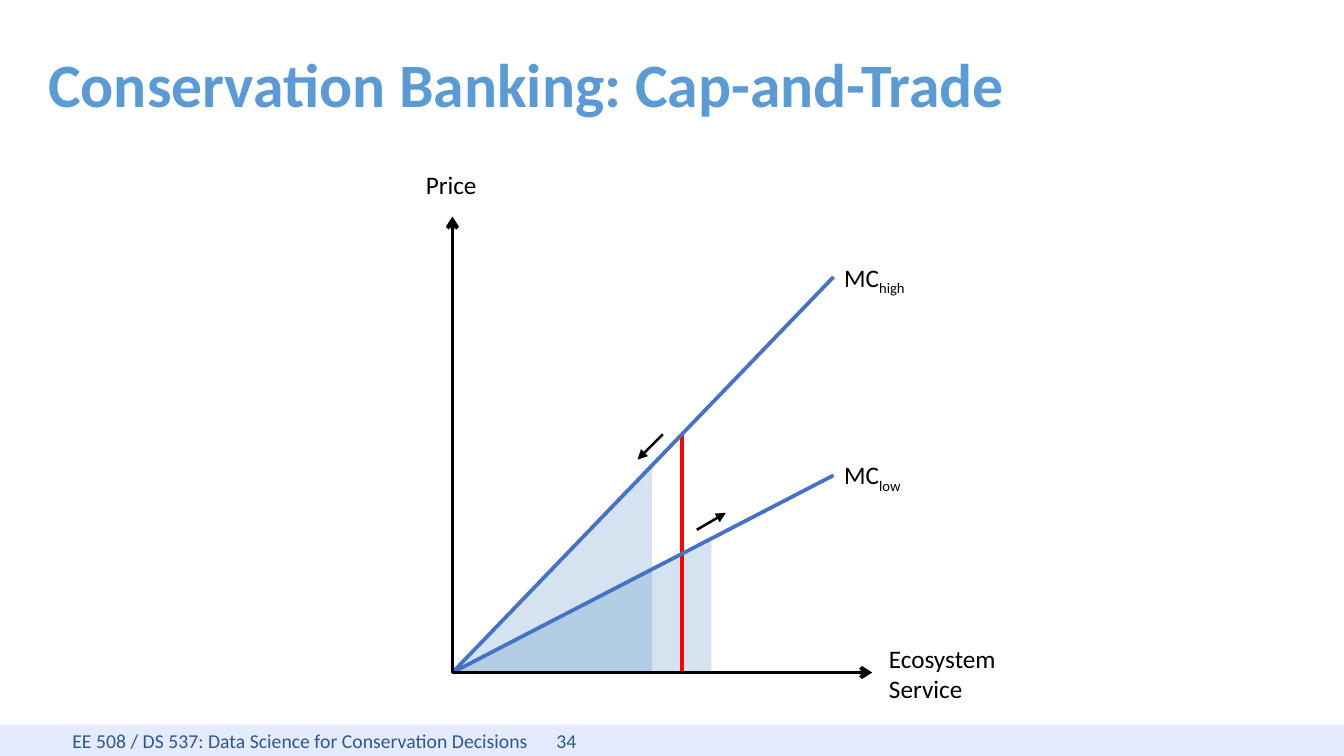
import pptx
import pptx.util
import pptx.dml.color
import pptx.enum.shapes
import pptx.enum.text
import pptx.oxml
import pptx.oxml.ns

Inches = pptx.util.Inches
Color = pptx.dml.color.RGBColor
Shape = pptx.enum.shapes.MSO_SHAPE
Align = pptx.enum.text.PP_ALIGN
Middle = pptx.enum.text.MSO_ANCHOR.MIDDLE

BLACK = Color(0x00, 0x00, 0x00)
RED = Color(0xFF, 0x00, 0x00)
BLUE = Color(0x44, 0x72, 0xC4)
SKY = Color(0x5B, 0x9B, 0xD5)
SHADE = Color(0x2E, 0x75, 0xB6)
NAVY = Color(0x2F, 0x55, 0x97)
PALE = Color(0xE3, 0xEB, 0xFC)

TITLE = {"name": "Calibri", "size": pptx.util.Pt(36.7), "bold": True}
LABEL = {"name": "Calibri", "size": pptx.util.Pt(15)}
FOOT = {"name": "Calibri", "size": pptx.util.Pt(11.7)}


def add_xml(parent, tag, **attrs):
    node = pptx.oxml.parse_xml(f"<a:{tag} {pptx.oxml.ns.nsdecls('a')}/>")
    for key, value in attrs.items():
        node.set(key, str(value))
    parent.append(node)
    return node


def add_run(para, words, style, color):
    run = para.add_run()
    run.text = words
    for key, value in style.items():
        setattr(run.font, key, value)
    run.font.color.rgb = color
    return run


deck = pptx.Presentation()
deck.slide_width, deck.slide_height = Inches(11.11), Inches(6.25)
slide = deck.slides.add_slide(deck.slide_layouts[6])
shapes = slide.shapes

band = shapes.add_shape(
    Shape.RECTANGLE, Inches(0), Inches(5.99), Inches(11.11), Inches(0.26)
)
band.shadow.inherit = False
band.fill.solid()
band.fill.fore_color.rgb = PALE
band.line.fill.background()
band.text_frame.vertical_anchor = Middle
para = band.text_frame.paragraphs[0]
para.alignment = Align.LEFT
tabs = add_xml(para._p.get_or_add_pPr(), "tabLst")
for stop in (0.5, 4.5):
    add_xml(tabs, "tab", pos=Inches(stop), algn="l")
add_run(
    para, "\tEE 508 / DS 537: Data Science for Conservation Decisions\t34", FOOT, NAVY
)

title = shapes.add_textbox(Inches(0.3), Inches(0.29), Inches(10.59), Inches(0.87))
title.text_frame.word_wrap = True
title.text_frame.vertical_anchor = Middle
para = title.text_frame.paragraphs[0]
para.line_spacing = 0.9
add_run(para, "Conservation Banking: Cap-and-Trade", TITLE, SKY)

left, base = 3.74, 5.56
for width, height in ((2.14, 1.1), (1.65, 1.73)):
    area = shapes.add_shape(
        Shape.RIGHT_TRIANGLE,
        Inches(left), Inches(base - height), Inches(width), Inches(height),
    )
    area.shadow.inherit = False
    area.line.fill.background()
    area.fill.solid()
    area.fill.fore_color.rgb = SHADE
    tint = area._element.spPr.find(".//" + pptx.oxml.ns.qn("a:srgbClr"))
    add_xml(tint, "alpha", val=20000)
    area._element.spPr.xfrm.set("flipH", "1")

cap, end = 5.64, 6.89
lines = [
    (cap, 3.6, cap, base, RED, 2.25, None),
    (left, base, end, 2.29, BLUE, 2.25, None),
    (left, base, end, 3.93, BLUE, 2.25, None),
    (left, base, left, 1.79, BLACK, 2.25, "arrow"),
    (left, base, 7.21, base, BLACK, 2.25, "arrow"),
    (5.48, 3.59, 5.27, 3.8, BLACK, 1.5, "triangle"),
    (5.76, 4.38, 6, 4.24, BLACK, 1.5, "triangle"),
]
for x1, y1, x2, y2, color, weight, tip in lines:
    line = shapes.add_connector(
        pptx.enum.shapes.MSO_CONNECTOR.STRAIGHT,
        Inches(x1), Inches(y1), Inches(x2), Inches(y2),
    )
    line.line.color.rgb = color
    line.line.width = pptx.util.Pt(weight)
    if tip:
        add_xml(line.line._get_or_add_ln(), "tailEnd", type=tip)
    add_xml(line._element.spPr, "effectLst")

labels = [
    (3.38, 1.35, 0.7, 0.35, "Price", "", Align.CENTER),
    (7.25, 5.27, 1.18, 0.61, "Ecosystem Service", "", Align.LEFT),
    (6.88, 2.12, 0.97, 0.35, "MC", "high", Align.LEFT),
    (6.88, 3.75, 0.7, 0.35, "MC", "low", Align.LEFT),
]
for x, y, width, height, words, sub, align in labels:
    box = shapes.add_textbox(Inches(x), Inches(y), Inches(width), Inches(height))
    box.text_frame.word_wrap = True
    para = box.text_frame.paragraphs[0]
    para.alignment = align
    add_run(para, words, LABEL, BLACK)
    if sub:
        run = add_run(para, sub, LABEL, BLACK)
        run._r.get_or_add_rPr().set("baseline", "-25000")

deck.save("out.pptx")
